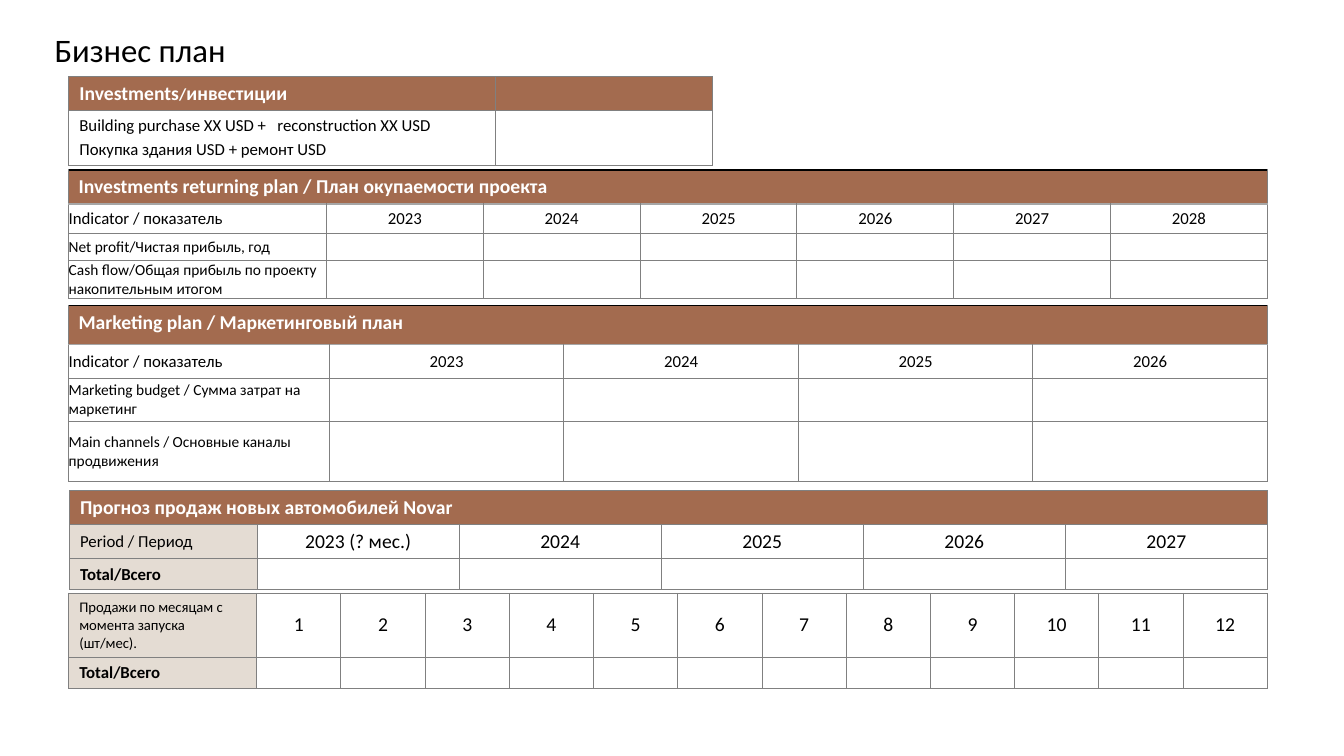
import pptx
import pptx.util
import pptx.dml.color
import pptx.enum.text
import pptx.oxml
import pptx.oxml.ns

Cm, Pt = pptx.util.Cm, pptx.util.Pt
ALIGN, ANCHOR = pptx.enum.text.PP_ALIGN, pptx.enum.text.MSO_ANCHOR

# Content
TITLE = "Бизнес план"
BROWN, SAND, WHITE, BLACK = "A36B4F", "E4DCD3", "FFFFFF", "000000"
GREY, PALE = "808080", "A6A6A6"
RIGHT = 31.94  # shared right edge of the wide tables, cm

# style: size, bold, colour, fill, centred, side inset, top inset, anchor
STYLES = {
    "head": (14, True, WHITE, BROWN, False, 0.27, 0.13, ANCHOR.MIDDLE),
    "banner": (14, True, WHITE, BROWN, False, 0.25, 0.13, ANCHOR.TOP),
    "body": (12, False, BLACK, None, False, 0.27, 0.13, ANCHOR.MIDDLE),
    "period": (12, False, BLACK, SAND, False, 0.27, 0.13, ANCHOR.MIDDLE),
    "months": (10.5, False, BLACK, SAND, False, 0.27, 0.13, ANCHOR.MIDDLE),
    "total": (12, True, BLACK, SAND, False, 0.27, 0.13, ANCHOR.MIDDLE),
    "large": (14, False, BLACK, None, True, 0.27, 0.13, ANCHOR.MIDDLE),
    "label": (12, False, BLACK, None, False, 0, 0, ANCHOR.MIDDLE),
    "year": (12, False, BLACK, None, True, 0, 0, ANCHOR.MIDDLE),
    "item": (11, False, BLACK, None, False, 0, 0, ANCHOR.MIDDLE),
}


def years(start, count):
    return [str(start + k) for k in range(count)]


# row: height, style and text of the first cell, style and texts of the rest
# "|" parts runs, a line break parts paragraphs
TABLES = [
    dict(left=1.75, top=12.36, right=RIGHT, first=4.73, count=5,
         span=True, rule=None, rows=[
             (0.86, "head", "Прогноз продаж новых автомобилей Novar", "head", []),
             (0.86, "period", "Period / Период", "large",
              ["2023 (? мес.)"] + years(2024, 4)),
             (0.77, "total", "Total/Всего", "large", [])]),
    dict(left=1.73, top=14.95, right=RIGHT, first=4.74, count=12,
         span=False, rule=None, rows=[
             (1.61, "months", "Продажи по месяцам с момента запуска (шт/мес).",
              "large", years(1, 12)),
             (0.76, "total", "Total/Всего", "large", [])]),
    dict(left=1.73, top=4.28, right=RIGHT, first=6.5, count=6,
         span=True, rule=1.5, rows=[
             (0.86, "banner", "Investments returning plan / План окупаемости проекта",
              "banner", []),
             (0.74, "label", "Indicator / показатель", "year", years(2023, 6)),
             (0.68, "item", "Net profit/Чистая прибыль, год", "year", []),
             (0.95, "item", "Cash flow/Общая прибыль по проекту накопительным итогом",
              "year", [])]),
    dict(left=1.73, top=1.93, right=17.96, first=10.75, count=1,
         span=False, rule=None, rows=[
             (0.86, "head", "Investments|/|инвестиции", "head", []),
             (1.36, "body", "Building purchase XX USD +   reconstruction XX USD\n"
              "Покупка здания USD + ремонт USD", "body", [])]),
    dict(left=1.73, top=7.7, right=RIGHT, first=6.57, count=4,
         span=True, rule=1, rows=[
             (0.99, "banner", "Marketing plan / Маркетинговый план", "banner", []),
             (0.85, "label", "Indicator / показатель", "year", years(2023, 4)),
             (1.07, "item", "Marketing budget / Сумма затрат на маркетинг", "year", []),
             (1.52, "item", "Main channels / Основные каналы продвижения", "year", [])]),
]


def color(code):
    return pptx.dml.color.RGBColor.from_string(code)


def edge(cell, side, code=GREY, width=0.75):
    props = cell._tc.get_or_add_tcPr()
    props.append(pptx.oxml.parse_xml(
        f'<a:ln{side} {pptx.oxml.ns.nsdecls("a")} w="{int(width * 12700)}">'
        f'<a:solidFill><a:srgbClr val="{code}"/></a:solidFill></a:ln{side}>'))


def write(cell, text, style):
    size, bold, ink, fill, center, side, rim, anchor = STYLES[style]
    if fill:
        cell.fill.solid()
        cell.fill.fore_color.rgb = color(fill)
    else:
        cell.fill.background()
    cell.vertical_anchor = anchor
    cell.margin_left = cell.margin_right = Cm(side)
    cell.margin_top = cell.margin_bottom = Cm(rim)
    frame = cell.text_frame
    if not text:  # a small end mark keeps empty rows low
        frame.paragraphs[0]._p.get_or_add_endParaRPr().set("sz", "800")
        return
    for k, line in enumerate(text.split("\n")):
        para = frame.add_paragraph() if k else frame.paragraphs[0]
        para.alignment = ALIGN.CENTER if center else ALIGN.LEFT
        if k:
            para.space_before = Pt(2.4)
        for part in line.split("|"):
            run = para.add_run()
            run.text = part
            run.font.name = "Calibri"
            run.font.size = Pt(12 if part == "/" else size)
            run.font.bold = bold
            run.font.color.rgb = color(ink)


def build(slide, plan):
    rows, count, left = plan["rows"], plan["count"], plan["left"]
    width = plan["right"] - left
    table = slide.shapes.add_table(
        len(rows), count + 1, Cm(left), Cm(plan["top"]), Cm(width),
        Cm(sum(row[0] for row in rows))).table
    table.first_row = table.horz_banding = False
    step = (width - plan["first"]) / count
    for k, col in enumerate(table.columns):
        col.width = Cm(step if k else plan["first"])
    if plan["span"]:
        table.cell(0, 0).merge(table.cell(0, count))

    for r, (height, lead, label, style, texts) in enumerate(rows):
        table.rows[r].height = Cm(height)
        for c, text in enumerate([label] + (texts or [""] * count)):
            cell = table.cell(r, c)
            edge(cell, "L")
            edge(cell, "R")
            if plan["rule"] and r == 0:
                edge(cell, "T", BLACK, plan["rule"])
                edge(cell, "B", PALE, 1)
            else:
                edge(cell, "T", *((PALE, 1) if plan["rule"] and r == 1 else ()))
                edge(cell, "B")
            if not cell.is_spanned:
                write(cell, text, style if c else lead)


def main():
    deck = pptx.Presentation()
    deck.slide_width, deck.slide_height = Cm(33.87), Cm(19.05)
    slide = deck.slides.add_slide(deck.slide_layouts[5])

    # Title
    title = slide.shapes.title
    title.left, title.top = Cm(1.12), Cm(0.72)
    title.width, title.height = Cm(31.27), Cm(1.17)
    frame = title.text_frame
    frame.text = TITLE
    frame.auto_size = pptx.enum.text.MSO_AUTO_SIZE.NONE
    frame.vertical_anchor = ANCHOR.MIDDLE
    para = frame.paragraphs[0]
    para.alignment = ALIGN.LEFT
    para.line_spacing = 0.9
    font = para.runs[0].font
    font.name, font.size = "Calibri", Pt(23.4)
    font.color.rgb = color(BLACK)

    # Tables
    for plan in TABLES:
        build(slide, plan)
    deck.save("out.pptx")


if __name__ == "__main__":
    main()
